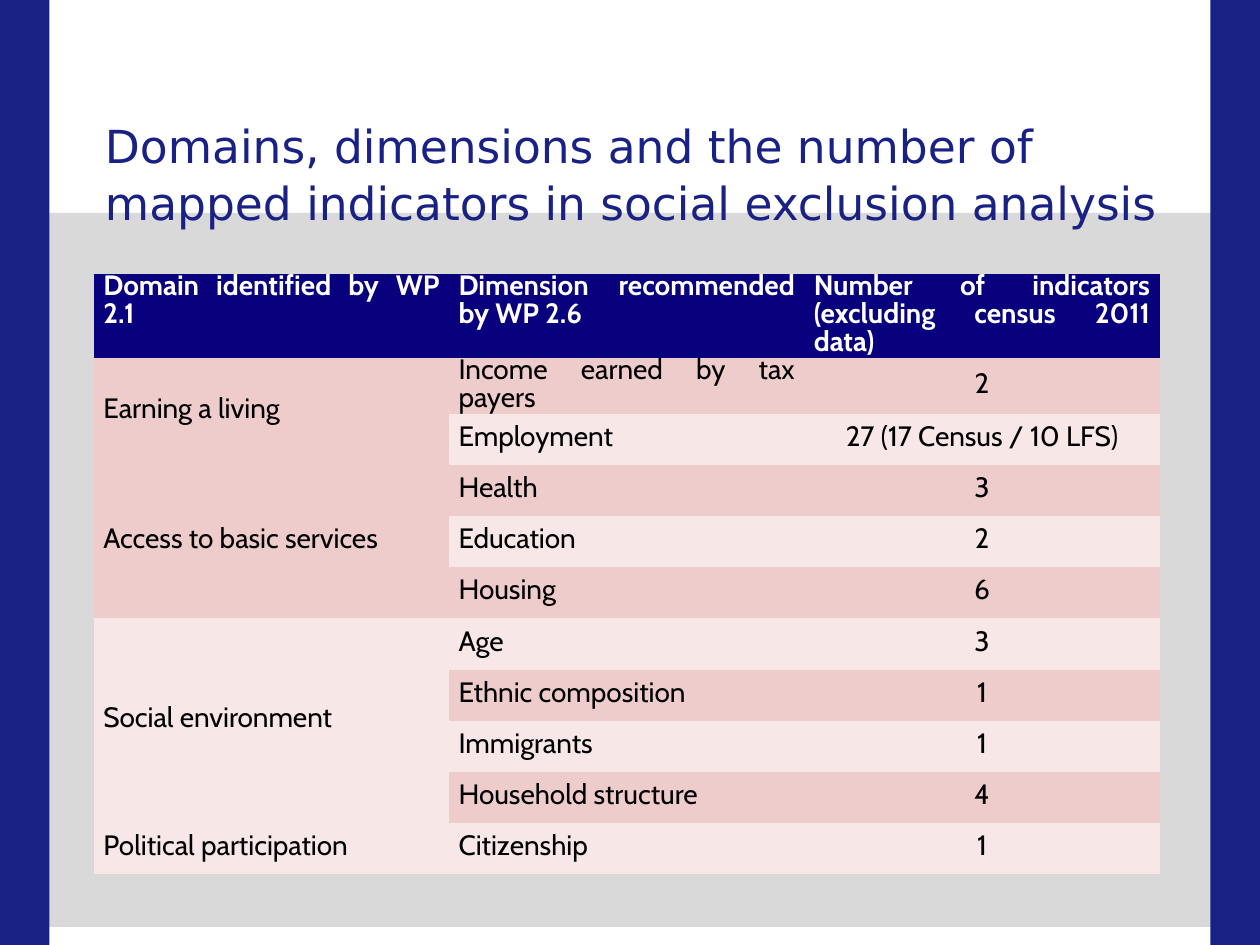
from pptx import Presentation
from pptx.dml.color import RGBColor
from pptx.enum.shapes import MSO_SHAPE as Shape
from pptx.enum.text import MSO_ANCHOR as Anchor, PP_ALIGN as Align
from pptx.oxml.ns import qn
from pptx.util import Pt

NAVY, GREY, WHITE, BLACK = "192185", "D9D9D9", "FFFFFF", "000000"
HEADER_FILL, BANDS = "08007D", ("EECCCC", "F7E7E7")
NO_GRID_STYLE = "{2D5ABB26-0587-4C30-8999-92F81FD0307C}"
WIDTH, HEIGHT, BAR_WIDTH = 720, 540, 28.3
COLUMN_WIDTH, ROW_HEIGHT = 203, 29.2

TITLE = "Domains, dimensions and the number of mapped indicators in social exclusion analysis"
HEADINGS = (
    "Domain identified by WP 2.1",
    "Dimension recommended by WP 2.6",
    "Number of indicators (excluding census 2011 data)",
)
DOMAINS = {
    "Earning a living": [
        ("Income earned by tax payers", "2"),
        ("Employment", "27 (17 Census / 10 LFS)"),
    ],
    "Access to basic services": [("Health", "3"), ("Education", "2"), ("Housing", "6")],
    "Social environment": [
        ("Age", "3"),
        ("Ethnic composition", "1"),
        ("Immigrants", "1"),
        ("Household structure", "4"),
    ],
    "Political participation": [("Citizenship", "1")],
}


def color(value):
    return RGBColor.from_string(value)


def set_font(paragraph, name, size, ink, bold=False):
    font = paragraph.font
    font.name, font.size, font.bold = name, Pt(size), bold
    font.color.rgb = color(ink)


def add_block(slide, left, top, width, height, fill):
    shape = slide.shapes.add_shape(
        Shape.RECTANGLE, Pt(left), Pt(top), Pt(width), Pt(height))
    shape.shadow.inherit = False
    shape.fill.solid()
    shape.fill.fore_color.rgb = color(fill)
    shape.line.fill.background()


def add_title(slide):
    frame = slide.shapes.add_textbox(Pt(60), Pt(66.4), Pt(609), Pt(50.4)).text_frame
    frame.word_wrap = True
    frame.margin_left = frame.margin_right = frame.margin_top = frame.margin_bottom = 0
    paragraph = frame.paragraphs[0]
    paragraph.text = TITLE
    paragraph.line_spacing = 1.04
    set_font(paragraph, "DejaVu Sans", 26, NAVY)


def fill_cell(cell, text, fill, ink=BLACK, bold=False, align=Align.JUSTIFY, anchor=Anchor.MIDDLE):
    cell.fill.solid()
    cell.fill.fore_color.rgb = color(fill)
    cell.margin_left = cell.margin_right = Pt(5.4)
    cell.margin_top = cell.margin_bottom = 0
    cell.vertical_anchor = anchor
    paragraph = cell.text_frame.paragraphs[0]
    paragraph.text = text
    paragraph.alignment = align
    paragraph.line_spacing, paragraph.space_before = Pt(16), Pt(6)
    set_font(paragraph, "Cabin", 16, ink, bold)


def add_indicator_table(slide):
    row_count = 1 + sum(len(dimensions) for dimensions in DOMAINS.values())
    table = slide.shapes.add_table(
        row_count, len(HEADINGS), Pt(53.7), Pt(156.6),
        Pt(COLUMN_WIDTH * len(HEADINGS)), Pt(ROW_HEIGHT * row_count)).table
    table.first_row = table.horz_banding = False
    table._tbl.tblPr.find(qn("a:tableStyleId")).text = NO_GRID_STYLE
    for column in table.columns:
        column.width = Pt(COLUMN_WIDTH)
    for row in table.rows:
        row.height = Pt(ROW_HEIGHT)

    for index, heading in enumerate(HEADINGS):
        fill_cell(table.cell(0, index), heading, HEADER_FILL, WHITE, True, anchor=Anchor.TOP)

    row = 1
    for domain, dimensions in DOMAINS.items():
        first, domain_fill = row, BANDS[(row - 1) % 2]
        for dimension, count in dimensions:
            band = BANDS[(row - 1) % 2]
            fill_cell(table.cell(row, 0), domain if row == first else "", domain_fill)
            fill_cell(table.cell(row, 1), dimension, band)
            fill_cell(table.cell(row, 2), count, band, align=Align.CENTER)
            row += 1
        if len(dimensions) > 1:
            table.cell(first, 0).merge(table.cell(row - 1, 0))


def main():
    presentation = Presentation()
    presentation.slide_width, presentation.slide_height = Pt(WIDTH), Pt(HEIGHT)
    slide = presentation.slides.add_slide(presentation.slide_layouts[6])
    add_block(slide, 0, 121.7, WIDTH, 408, GREY)
    for left in (WIDTH - BAR_WIDTH, 0):
        add_block(slide, left, 0, BAR_WIDTH, HEIGHT, NAVY)
    add_title(slide)
    add_indicator_table(slide)
    presentation.save("out.pptx")


if __name__ == "__main__":
    main()
